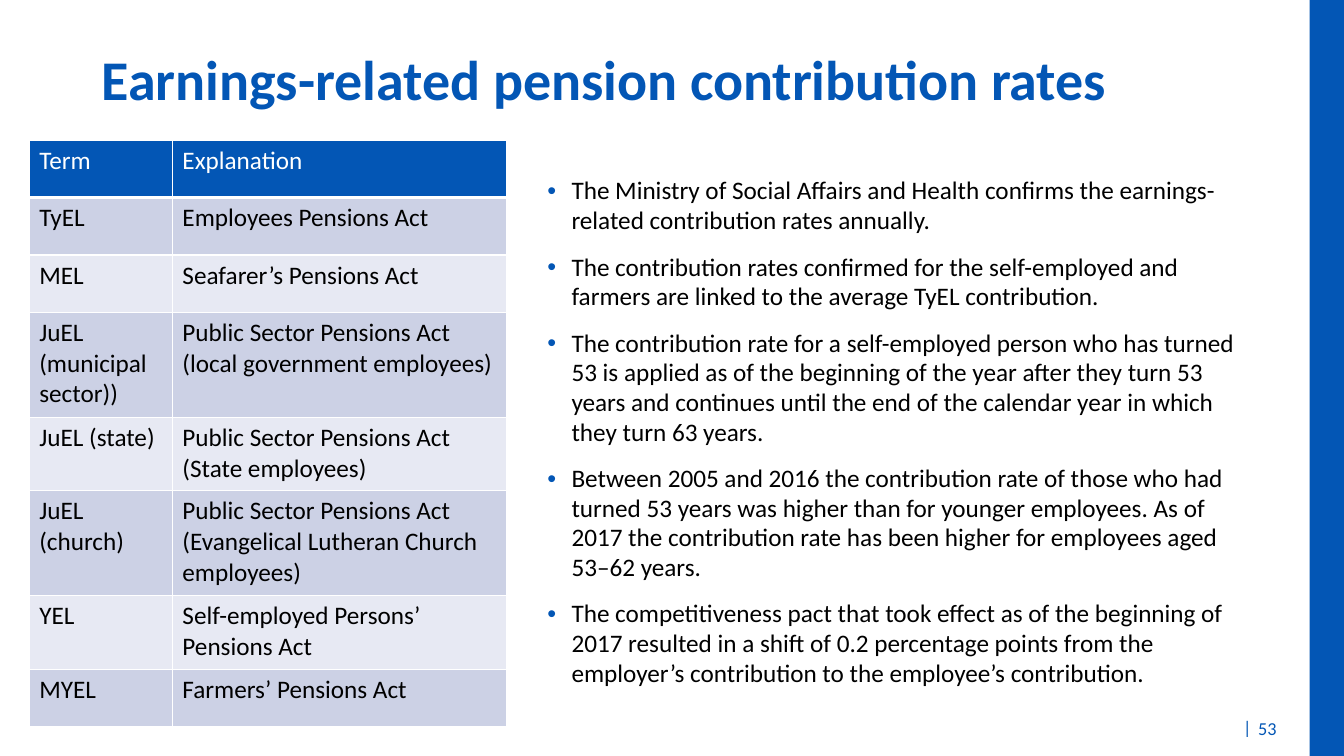
from dataclasses import dataclass

from lxml import etree
from pptx import Presentation
from pptx.dml.color import RGBColor
from pptx.enum.shapes import MSO_SHAPE
from pptx.enum.text import MSO_ANCHOR
from pptx.oxml.ns import qn
from pptx.util import Inches, Pt

RECTANGLE = MSO_SHAPE.RECTANGLE
TOP, MIDDLE = MSO_ANCHOR.TOP, MSO_ANCHOR.MIDDLE


@dataclass(frozen=True)
class Theme:
    font: str = "Calibri"
    blue: str = "0356B5"
    white: str = "FFFFFF"
    black: str = "000000"
    bands: tuple = ("CCD1E5", "E7E9F3")
    title_size: int = 40
    text_size: int = 18
    footer_size: int = 13


THEME = Theme()

TERMS = [
    ("Term", "Explanation"),
    ("TyEL", "Employees Pensions Act"),
    ("MEL", "Seafarer’s Pensions Act"),
    ("JuEL (municipal sector))", "Public Sector Pensions Act (local government employees)"),
    ("JuEL (state)", "Public Sector Pensions Act (State employees)"),
    ("JuEL (church)", "Public Sector Pensions Act (Evangelical Lutheran Church employees)"),
    ("YEL", "Self-employed Persons’ Pensions Act"),
    ("MYEL", "Farmers’ Pensions Act"),
]
COL_WIDTHS = (1.42, 3.31)
ROW_HEIGHTS = (0.57, 0.57, 0.57, 1.04, 0.73, 1.04, 0.73, 0.57)

POINTS = [
    "The Ministry of Social Affairs and Health confirms the earnings-related "
    "contribution rates annually.",
    "The contribution rates confirmed for the self-employed and farmers are linked "
    "to the average TyEL contribution.",
    "The contribution rate for a self-employed person who has turned 53 is applied "
    "as of the beginning of the year after they turn 53 years and continues until "
    "the end of the calendar year in which they turn 63 years.",
    "Between 2005 and 2016 the contribution rate of those who had turned 53 years "
    "was higher than for younger employees. As of 2017 the contribution rate has "
    "been higher for employees aged 53–62 years.",
    "The competitiveness pact that took effect as of the beginning of 2017 resulted "
    "in a shift of 0.2 percentage points from the employer’s contribution to the "
    "employee’s contribution.",
]


def style_runs(p, size, color, bold=False):
    for r in p.runs:
        r.font.name = THEME.font
        r.font.size = Pt(size)
        r.font.bold = bold
        r.font.color.rgb = RGBColor.from_string(color)


def add_text(s, box, text, size, color, bold=False, anchor=TOP, wrap=True):
    tf = s.shapes.add_textbox(*map(Inches, box)).text_frame
    tf.word_wrap = wrap
    tf.vertical_anchor = anchor
    tf.text = text
    for p in tf.paragraphs:
        style_runs(p, size, color, bold)
    return tf


def add_bar(s, box):
    sp = s.shapes.add_shape(RECTANGLE, *map(Inches, box))
    sp.shadow.inherit = False
    sp.fill.solid()
    sp.fill.fore_color.rgb = RGBColor.from_string(THEME.blue)
    sp.line.fill.background()


def set_bullet(p, indent):
    pPr = p._p.get_or_add_pPr()
    pPr.set("marL", str(Inches(indent)))
    pPr.set("indent", str(-Inches(indent)))
    color = etree.SubElement(pPr, qn("a:buClr"))
    etree.SubElement(color, qn("a:srgbClr"), val=THEME.blue)
    etree.SubElement(pPr, qn("a:buFont"), typeface="Arial")
    etree.SubElement(pPr, qn("a:buChar"), char="•")


def add_bullets(s, box, points):
    tf = add_text(s, box, "\n".join(points), THEME.text_size, THEME.black)
    for p in tf.paragraphs:
        set_bullet(p, 0.24)
        p.space_after = Pt(12)
        p.line_spacing = 0.98


def set_borders(cell, bottom):
    tcPr = cell._tc.get_or_add_tcPr()
    for side, width in (("L", 1), ("R", 1), ("T", 1), ("B", bottom)):
        ln = etree.SubElement(tcPr, qn(f"a:ln{side}"), w=str(Pt(width)))
        fill = etree.SubElement(ln, qn("a:solidFill"))
        etree.SubElement(fill, qn("a:srgbClr"), val=THEME.white)


def add_terms_table(s, left, top):
    size = Inches(sum(COL_WIDTHS)), Inches(sum(ROW_HEIGHTS))
    table = s.shapes.add_table(
        len(TERMS), len(COL_WIDTHS), Inches(left), Inches(top), *size
    ).table
    for column, width in zip(table.columns, COL_WIDTHS):
        column.width = Inches(width)
    for i, (row, height, texts) in enumerate(zip(table.rows, ROW_HEIGHTS, TERMS)):
        row.height = Inches(height)
        header = i == 0
        fill = THEME.blue if header else THEME.bands[(i - 1) % 2]
        color = THEME.white if header else THEME.black
        for cell, text in zip(row.cells, texts):
            set_borders(cell, 3 if header else 1)
            cell.fill.solid()
            cell.fill.fore_color.rgb = RGBColor.from_string(fill)
            cell.text_frame.text = text
            style_runs(cell.text_frame.paragraphs[0], THEME.text_size, color)


def main():
    prs = Presentation()
    prs.slide_width, prs.slide_height = Inches(13.33), Inches(7.5)
    s = prs.slides.add_slide(prs.slide_layouts[6])

    add_bar(s, (12.99, 0, 0.34, 7.5))
    add_text(s, (12.23, 7.06, 0.29, 0.35), "|", THEME.footer_size, THEME.blue, wrap=False)
    add_text(s, (0.91, 0.39, 10.43, 1.19), "Earnings-related pension contribution rates",
             THEME.title_size, THEME.blue, bold=True)
    add_bullets(s, (5.33, 1.7, 7.02, 5.27), POINTS)
    add_text(s, (12.38, 7.05, 0.44, 0.35), "53", THEME.footer_size, THEME.blue, anchor=MIDDLE)
    add_terms_table(s, 0.29, 1.39)

    prs.save("out.pptx")


if __name__ == "__main__":
    main()
